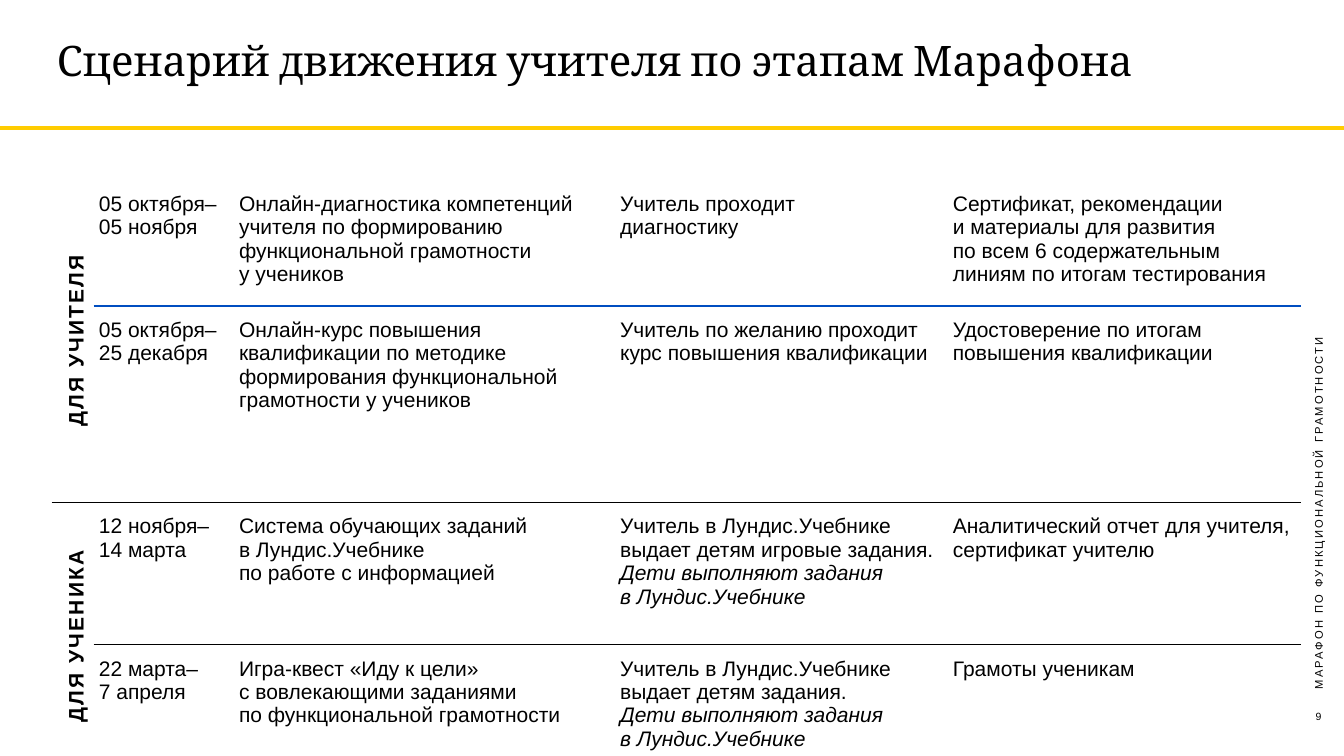
from pptx import Presentation
from pptx.dml.color import RGBColor
from pptx.enum import shapes, text
from pptx.oxml import parse_xml
from pptx.oxml.ns import nsdecls
from pptx.util import Pt

BLACK = RGBColor(0x00, 0x00, 0x00)
BLUE = RGBColor(0x00, 0x4E, 0xC0)
YELLOW = RGBColor(0xFF, 0xCC, 0x00)

SLIDE_WIDTH, SLIDE_HEIGHT = 1919.5, 1080
COLUMN_WIDTHS = (59.8, 200.2, 544.3, 475.2, 504.7)
ROW_HEIGHTS = (170, 280.5, 203, 170)
CELL_MARGINS = dict(margin_left=Pt(7.2), margin_right=Pt(7.2),
                    margin_top=Pt(18), margin_bottom=Pt(18))
# Rule under a row: colour, width, first column it spans
RULES = {0: (BLUE, 2.25, 1), 1: (BLACK, 1, 0), 2: (BLACK, 1, 1)}

# "\v" breaks a line, "\n" starts a paragraph, "*" opens an italic paragraph
AUDIENCES = {0: "ДЛЯ УЧИТЕЛЯ", 2: "ДЛЯ УЧЕНИКА"}
STAGES = (
    ("05 октября–\v05 ноября",
     "Онлайн-диагностика компетенций учителя по формированию "
     "функциональной грамотности \vу учеников",
     "Учитель проходит \vдиагностику",
     "Сертификат, рекомендации \vи материалы для развития \v"
     "по всем 6 содержательным линиям по итогам тестирования"),
    ("05 октября–25 декабря",
     "Онлайн-курс повышения квалификации по методике формирования "
     "функциональной грамотности у учеников",
     "Учитель по желанию проходит \vкурс повышения квалификации",
     "Удостоверение по итогам повышения квалификации"),
    ("12 ноября–\v14 марта",
     "Система обучающих заданий \vв Лундис.Учебнике\n"
     "по работе с информацией",
     "Учитель в Лундис.Учебнике \vвыдает детям игровые задания.\n"
     "*Дети выполняют задания \vв Лундис.Учебнике",
     "Аналитический отчет для учителя, сертификат учителю"),
    ("22 марта–\v7 апреля",
     "Игра-квест «Иду к цели» \vс вовлекающими заданиями \v"
     "по функциональной грамотности",
     "Учитель в Лундис.Учебнике \vвыдает детям задания.\n"
     "*Дети выполняют задания \vв Лундис.Учебнике",
     "Грамоты ученикам"),
)


def apply(target, **values):
    for name, value in values.items():
        setattr(target, name, value)


def write(frame, content, size, font="Arial", bold=False, spacing=0, **paragraph_format):
    """Fill a text frame; spacing is the letter spacing in points."""
    for index, line in enumerate(content.split("\n")):
        paragraph = frame.add_paragraph() if index else frame.paragraphs[0]
        paragraph.text = line.lstrip("*")
        apply(paragraph, **paragraph_format)
        for run in paragraph.runs:
            apply(run.font, name=font, size=Pt(size), bold=bold,
                  italic=line.startswith("*"))
            run.font.color.rgb = BLACK
            if spacing:
                run.font._element.set("spc", str(spacing * 100))


def add_label(slide, box, content, size, rotation=0,
              anchor=text.MSO_ANCHOR.TOP, **text_format):
    label = slide.shapes.add_textbox(*map(Pt, box))
    label.rotation = rotation
    apply(label.text_frame, word_wrap=True, vertical_anchor=anchor)
    write(label.text_frame, content, size, **text_format)


def add_header(slide, left, top, width, height):
    rule_y = Pt(top + height + 2.9)
    rule = slide.shapes.add_connector(
        shapes.MSO_CONNECTOR.STRAIGHT, 0, rule_y, Pt(SLIDE_WIDTH), rule_y)
    rule.line.color.rgb = YELLOW
    rule.line.width = Pt(5)
    rule._element.spPr.append(parse_xml(f"<a:effectLst {nsdecls('a')}/>"))
    add_label(slide, (left, top, width, height),
              "Сценарий движения учителя по этапам Марафона", 60,
              anchor=text.MSO_ANCHOR.MIDDLE, font="Cambria", line_spacing=0.9)


def add_border(cell, side, color, width):
    cell._tc.get_or_add_tcPr().append(parse_xml(
        f'<a:{side} {nsdecls("a")} w="{Pt(width)}"><a:solidFill>'
        f'<a:srgbClr val="{color}"/></a:solidFill></a:{side}>'))


def style_cell(cell, row, column):
    apply(cell, **CELL_MARGINS)
    for side, rule_row in (("lnT", row - 1), ("lnB", row)):
        if rule_row in RULES:
            color, width, first_column = RULES[rule_row]
            if column >= first_column:
                add_border(cell, side, color, width)
    cell.fill.background()


def add_schedule(slide, left, top):
    frame = slide.shapes.add_table(
        len(ROW_HEIGHTS), len(COLUMN_WIDTHS), Pt(left), Pt(top),
        Pt(sum(COLUMN_WIDTHS)), Pt(sum(ROW_HEIGHTS)))
    table = frame.table
    apply(table, first_row=False, horz_banding=False)
    for column, width in zip(table.columns, COLUMN_WIDTHS):
        column.width = Pt(width)
    for row, height in zip(table.rows, ROW_HEIGHTS):
        row.height = Pt(height)
    for row in range(len(ROW_HEIGHTS)):
        for column in range(len(COLUMN_WIDTHS)):
            style_cell(table.cell(row, column), row, column)
    for row, audience in AUDIENCES.items():
        cell = table.cell(row, 0)
        cell.merge(table.cell(row + 1, 0))
        cell._tc.get_or_add_tcPr().set("vert", "vert270")
        write(cell.text_frame, audience, 30, bold=True, spacing=3,
              alignment=text.PP_ALIGN.CENTER)
    for row, stage in enumerate(STAGES):
        for column, content in enumerate(stage, 1):
            write(table.cell(row, column).text_frame, content, 30)


def add_side_caption(slide, center_x, center_y, length, thickness):
    add_label(slide, (center_x - length / 2, center_y - thickness / 2, length, thickness),
              "МАРАФОН ПО ФУНКЦИОНАЛЬНОЙ ГРАМОТНОСТИ", 16, rotation=270,
              anchor=text.MSO_ANCHOR.MIDDLE, spacing=3)


def main():
    deck = Presentation()
    apply(deck, slide_width=Pt(SLIDE_WIDTH), slide_height=Pt(SLIDE_HEIGHT))
    slide = deck.slides.add_slide(deck.slide_layouts[6])
    add_header(slide, 74.2, 0, 1770.5, 180)
    add_label(slide, (1866.2, 1010.2, 33.8, 57.6), "9", 15,
              alignment=text.PP_ALIGN.CENTER)
    add_schedule(slide, 74.2, 257)
    add_side_caption(slide, 1882.8, 637.2, 708.5, 23)
    deck.save("out.pptx")


if __name__ == "__main__":
    main()
